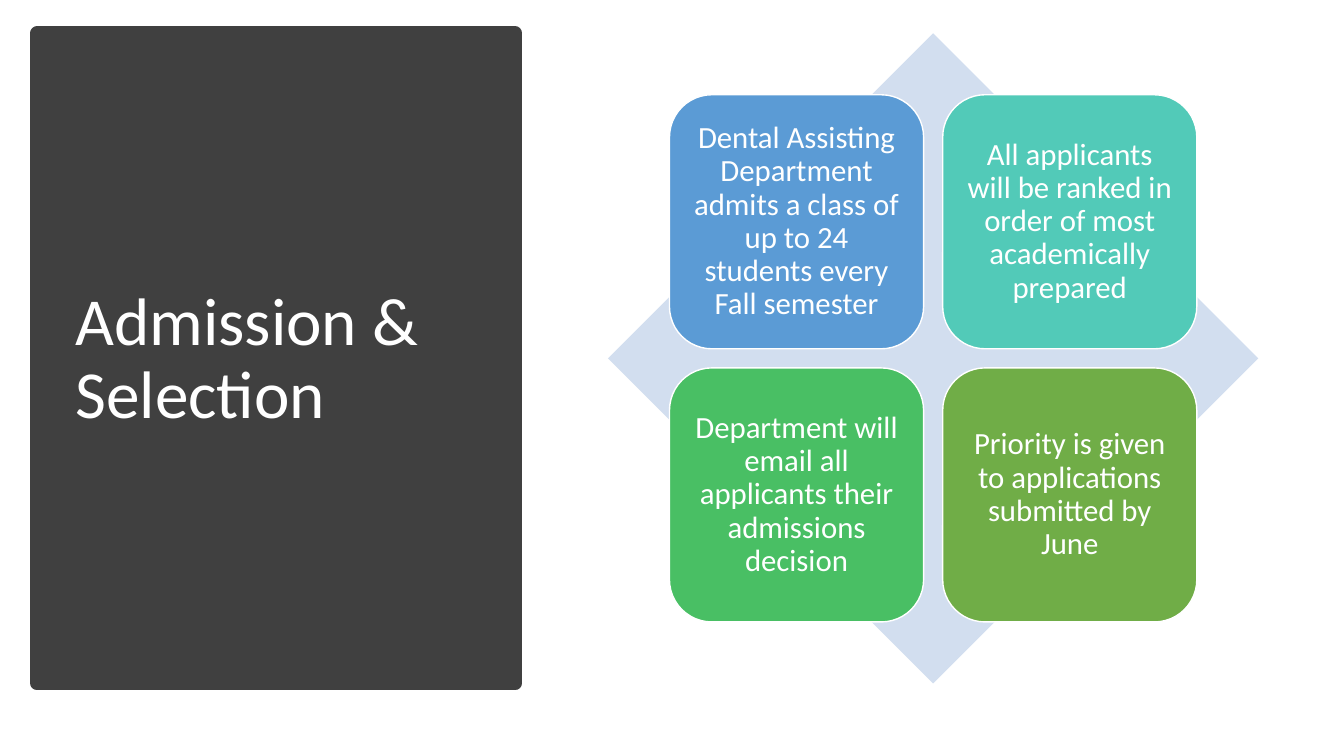
from pptx import Presentation
from pptx.dml.color import RGBColor
from pptx.enum.shapes import MSO_SHAPE
from pptx.enum.text import MSO_ANCHOR, PP_ALIGN
from pptx.util import Inches, Pt


def color(hex_code):
    return RGBColor.from_string(hex_code)


class SlideBuilder:
    FONT = "Calibri"
    TEXT_COLOR = "FFFFFF"
    LINE_SPACING = 0.9

    def __init__(self, slide):
        self.slide = slide

    def shape(self, preset, left, top, width, height, fill, line=None, line_width=1):
        shape = self.slide.shapes.add_shape(
            preset, Inches(left), Inches(top), Inches(width), Inches(height))
        shape.shadow.inherit = False
        shape.fill.solid()
        shape.fill.fore_color.rgb = color(fill)
        if line:
            shape.line.color.rgb = color(line)
            shape.line.width = Pt(line_width)
        else:
            shape.line.fill.background()
        return shape

    def set_text(self, frame, text, size, align):
        """Fill a text frame with one vertically centred paragraph."""
        frame.text = text
        frame.word_wrap = True
        frame.vertical_anchor = MSO_ANCHOR.MIDDLE
        paragraph = frame.paragraphs[0]
        paragraph.alignment = align
        paragraph.line_spacing = self.LINE_SPACING
        font = paragraph.runs[0].font
        font.name = self.FONT
        font.size = Pt(size)
        font.color.rgb = color(self.TEXT_COLOR)

    def title(self, text, left, top, width, height):
        box = self.slide.shapes.add_textbox(
            Inches(left), Inches(top), Inches(width), Inches(height))
        self.set_text(box.text_frame, text, 48, PP_ALIGN.LEFT)

    def card(self, text, left, top, side, fill):
        card = self.shape(MSO_SHAPE.ROUNDED_RECTANGLE, left, top, side, side, fill, "FFFFFF")
        frame = card.text_frame
        frame.margin_left = frame.margin_right = Inches(0.09)
        frame.margin_top = frame.margin_bottom = Inches(0.09)
        self.set_text(frame, text, 22, PP_ALIGN.CENTER)


ADMISSION_FACTS = [
    ("Dental Assisting Department admits a class of up to 24 students every Fall semester", "5B9BD5"),
    ("All applicants will be ranked in order of most academically prepared", "52CAB8"),
    ("Department will email all applicants their admissions decision", "49BF64"),
    ("Priority is given to applications submitted by June", "70AD47"),
]
CARD_LEFT, CARD_TOP, CARD_SIDE, CARD_STEP = 6.64, 0.94, 2.52, 2.71


def main():
    presentation = Presentation()
    presentation.slide_width = Inches(13.33)
    presentation.slide_height = Inches(7.5)
    builder = SlideBuilder(presentation.slides.add_slide(presentation.slide_layouts[6]))

    builder.shape(MSO_SHAPE.RECTANGLE, 0.37, 0.33, 4.74, 6.45, "404040", "404040", 10)
    builder.title("Admission & Selection", 0.65, 0.7, 4.16, 5.75)

    builder.shape(MSO_SHAPE.DIAMOND, 6.03, 0.33, 6.45, 6.45, "D2DEEF")
    for index, (fact, fill) in enumerate(ADMISSION_FACTS):
        row, column = divmod(index, 2)
        builder.card(fact, CARD_LEFT + column * CARD_STEP,
                     CARD_TOP + row * CARD_STEP, CARD_SIDE, fill)

    presentation.save("out.pptx")


if __name__ == "__main__":
    main()
